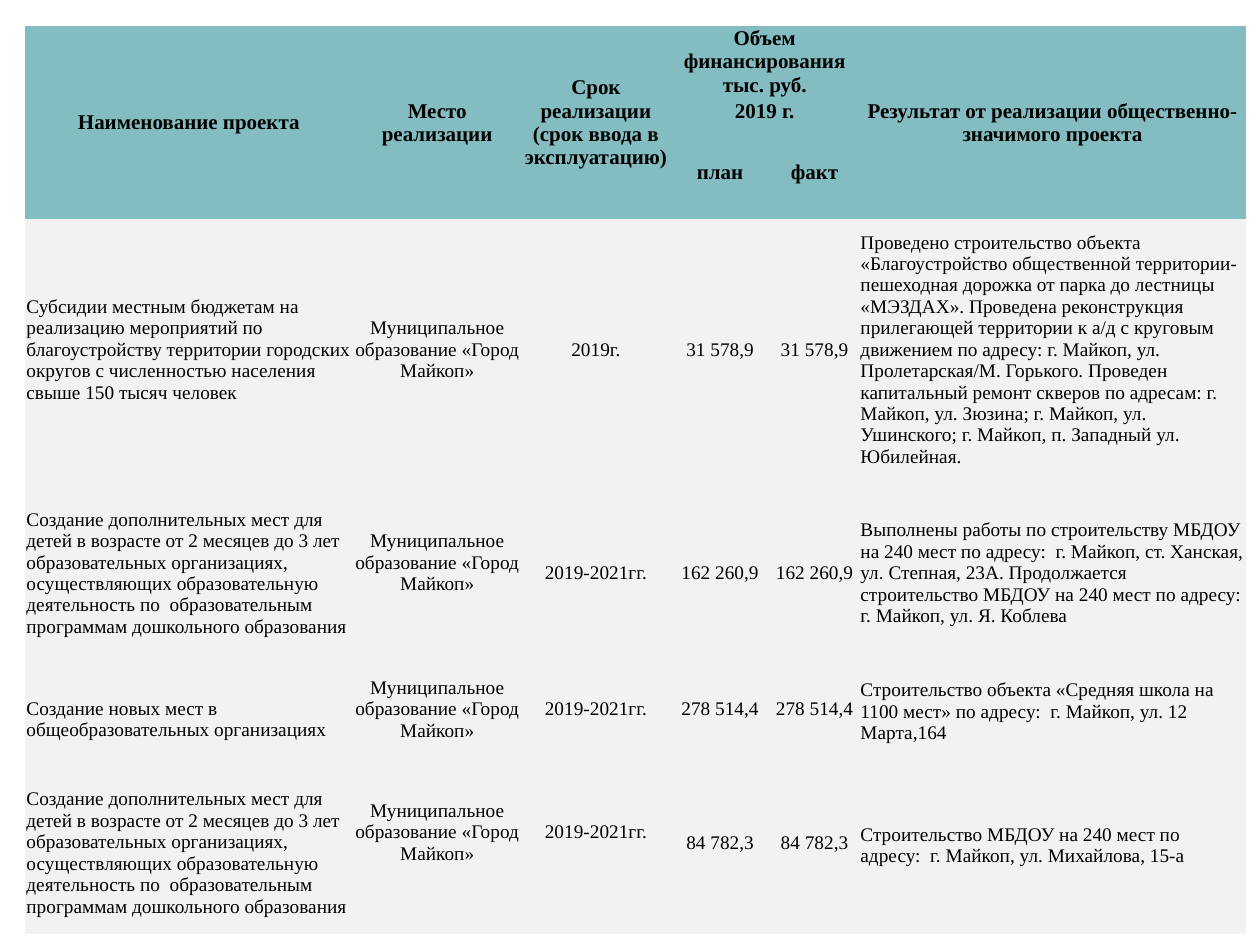
from pptx import Presentation
from pptx.dml.color import RGBColor
from pptx.enum.text import MSO_ANCHOR, PP_ALIGN
from pptx.oxml.ns import qn
from pptx.util import Inches, Pt

COLORS = {"header": "83BCC1", "body": "F2F2F2", "text": "000000"}
FONT = "Times New Roman"
NO_STYLE_NO_GRID = "{2D5ABB26-0587-4C30-8999-92F81FD0307C}"
HALF_LINE_SHIFT = 0.17

COLUMN_WIDTHS = [2.6, 1.34, 1.18, 0.79, 0.71, 3.07]
ROW_HEIGHTS = [0.56, 0.23, 0.74, 2.06, 1.49, 0.67, 0.04, 1.41]

# (row, column): (text, rows spanned, columns spanned)
HEADERS = {
    (0, 0): ("Наименование проекта", 3, 1),
    (0, 1): ("Место реализации", 3, 1),
    (0, 2): ("Срок реализации (срок ввода в эксплуатацию)", 3, 1),
    (0, 3): ("Объем финансирования тыс. руб.", 1, 2),
    (0, 5): ("Результат от реализации общественно-значимого проекта", 3, 1),
    (1, 3): ("2019 г.", 1, 2),
    (2, 3): ("план", 1, 1),
    (2, 4): ("факт", 1, 1),
}

PLACE = "Муниципальное образование «Город Майкоп»"
NURSERY_PLACES = (
    "Создание дополнительных мест для детей в возрасте от 2 месяцев до 3 лет "
    "образовательных организациях, осуществляющих образовательную деятельность "
    "по  образовательным программам дошкольного образования"
)
# First table row of each project: name, term, planned and actual sum, result
PROJECTS = {
    3: (
        "Субсидии местным бюджетам на реализацию мероприятий по благоустройству "
        "территории городских округов с численностью населения свыше 150 тысяч человек",
        "2019г.", "31 578,9", "31 578,9",
        "Проведено строительство объекта «Благоустройство общественной территории- "
        "пешеходная дорожка от парка до лестницы «МЭЗДАХ». Проведена реконструкция "
        "прилегающей территории к а/д с круговым движением по адресу: г. Майкоп, ул. "
        "Пролетарская/М. Горького. Проведен капитальный ремонт скверов по адресам: "
        "г. Майкоп, ул. Зюзина; г. Майкоп, ул. Ушинского; г. Майкоп, п. Западный "
        "ул. Юбилейная.",
    ),
    4: (
        NURSERY_PLACES, "2019-2021гг.", "162 260,9", "162 260,9",
        "Выполнены работы по строительству МБДОУ на 240 мест по адресу:  г. Майкоп, "
        "ст. Ханская, ул. Степная, 23А. Продолжается строительство МБДОУ на 240 мест "
        "по адресу: г. Майкоп, ул. Я. Коблева",
    ),
    5: (
        "Создание новых мест в общеобразовательных организациях",
        "2019-2021гг.", "278 514,4", "278 514,4",
        "Строительство объекта «Средняя школа на 1100 мест» по адресу:  г. Майкоп, "
        "ул. 12 Марта,164",
    ),
    6: (
        NURSERY_PLACES, "2019-2021гг.", "84 782,3", "84 782,3",
        "Строительство МБДОУ на 240 мест по адресу:  г. Майкоп, ул. Михайлова, 15-а",
    ),
}
LOWERED = {(5, 0), (6, 0)}
RAISED = {(4, 1), (6, 1), (6, 2)}


def write_cell(cell, text, size=11, bold=False, align=PP_ALIGN.LEFT, inset=0.01,
               top=0.01, bottom=0):
    cell.vertical_anchor = MSO_ANCHOR.MIDDLE
    cell.margin_left = cell.margin_right = Inches(inset)
    cell.margin_top, cell.margin_bottom = Inches(top), Inches(bottom)
    para = cell.text_frame.paragraphs[0]
    para.alignment = align
    span = para.add_run()
    span.text = text
    span.font.name, span.font.size, span.font.bold = FONT, Pt(size), bold
    span.font.color.rgb = RGBColor.from_string(COLORS["text"])


def merge_down(table, row, column, rows=1, columns=1):
    cell = table.cell(row, column)
    if rows > 1 or columns > 1:
        cell.merge(table.cell(row + rows - 1, column + columns - 1))
    return cell


def fill_header(table):
    for (row, column), (text, rows, columns) in HEADERS.items():
        write_cell(merge_down(table, row, column, rows, columns), text, size=12,
                   bold=True, align=PP_ALIGN.CENTER, inset=0, top=0)


def fill_projects(table):
    last_column = len(COLUMN_WIDTHS) - 1
    for first_row, (name, *details) in PROJECTS.items():
        for column, text in enumerate([name, PLACE, *details]):
            row, rows = first_row, 1
            # The thin row belongs to the last project, except in the result column
            if column == last_column:
                row, rows = {5: (5, 2), 6: (7, 1)}.get(first_row, (first_row, 1))
            elif first_row == 6:
                rows = 2
            centred = 0 < column < last_column
            place = (first_row, column)
            write_cell(merge_down(table, row, column, rows), text,
                       align=PP_ALIGN.CENTER if centred else PP_ALIGN.LEFT,
                       top=HALF_LINE_SHIFT if place in LOWERED else 0.01,
                       bottom=HALF_LINE_SHIFT if place in RAISED else 0)


def add_project_table(page, left, top, width, height):
    frame = page.shapes.add_table(len(ROW_HEIGHTS), len(COLUMN_WIDTHS),
                                  left, top, width, height)
    table = frame.table
    table.first_row = table.horz_banding = False
    style = next(frame._element.iter(qn("a:tableStyleId")))
    style.text = NO_STYLE_NO_GRID
    for column, size in zip(table.columns, COLUMN_WIDTHS):
        column.width = Inches(size)
    for index, (row, size) in enumerate(zip(table.rows, ROW_HEIGHTS)):
        row.height = Inches(size)
        for cell in row.cells:
            cell.fill.solid()
            color = COLORS["header" if index < 3 else "body"]
            cell.fill.fore_color.rgb = RGBColor.from_string(color)
            cell.margin_top = cell.margin_bottom = 0
    fill_header(table)
    fill_projects(table)


def main():
    deck = Presentation()
    deck.slide_width, deck.slide_height = Inches(10), Inches(7.5)
    page = deck.slides.add_slide(deck.slide_layouts[6])
    add_project_table(page, Inches(0.2), Inches(0.21),
                      Inches(sum(COLUMN_WIDTHS)), Inches(sum(ROW_HEIGHTS)))
    deck.save("out.pptx")


if __name__ == "__main__":
    main()
